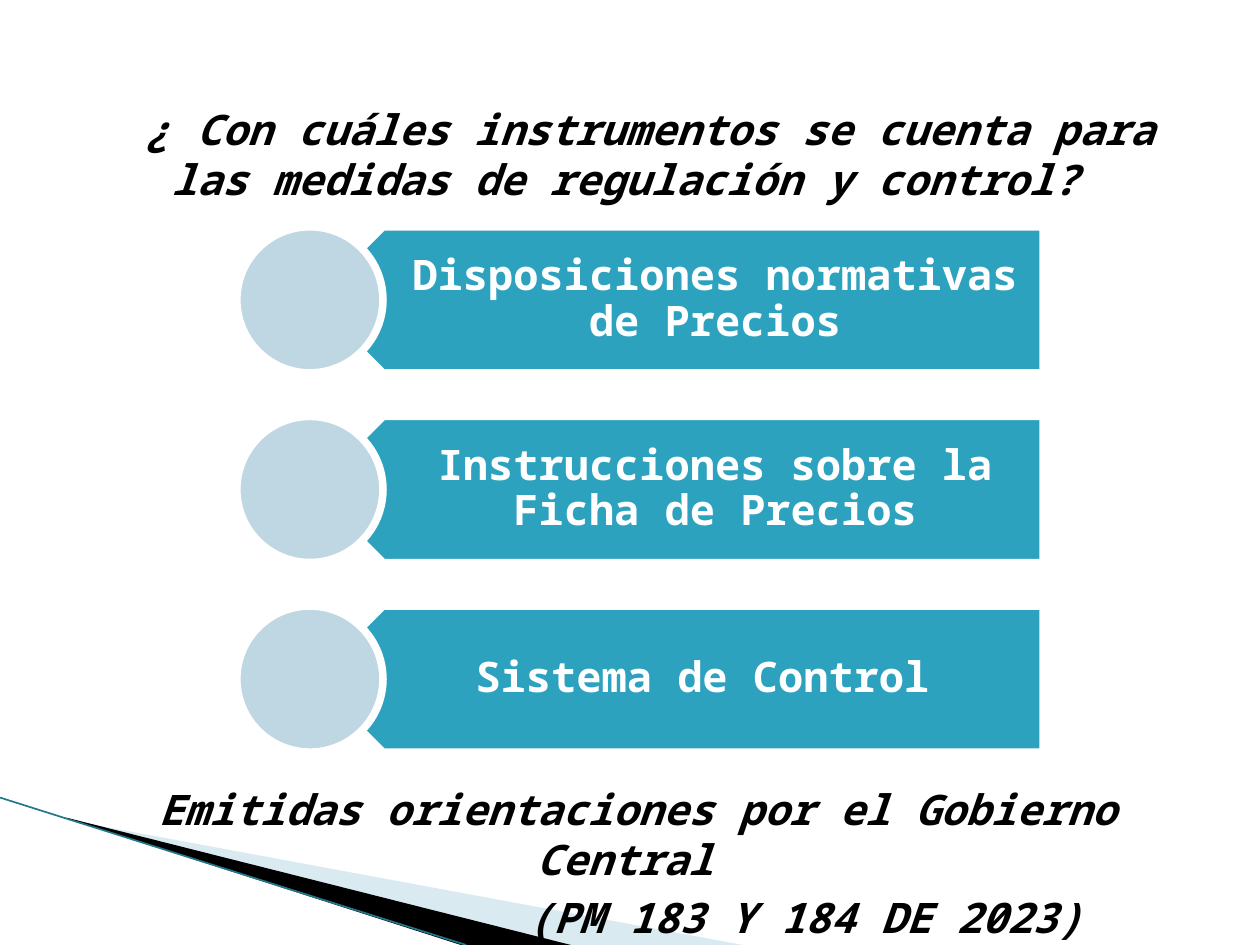
import pptx
import pptx.util
import pptx.dml.color
import pptx.enum.shapes
import pptx.enum.text
import pptx.oxml.ns
import lxml.etree

Inches = pptx.util.Inches
Pt = pptx.util.Pt
SHAPES = pptx.enum.shapes.MSO_SHAPE
ANCHORS = pptx.enum.text.MSO_ANCHOR
CENTER = pptx.enum.text.PP_ALIGN.CENTER

INSTRUMENTS = [
    "Disposiciones normativas de Precios",
    "Instrucciones sobre la Ficha de Precios",
    "Sistema de Control ",
]
ROW_TOP, ROW_STEP, ROW_HEIGHT = 1.8, 1.505, 1.16


def color(value):
    return pptx.dml.color.RGBColor.from_string(value)


def apply(target, values):
    """Set each attribute named in values on the target."""
    for name, value in values.items():
        setattr(target, name, value)


class SlideBuilder:
    """Holds the style and the current slide."""

    font = {"name": "Noto Sans Mono", "size": Pt(24), "bold": True}
    black, white = "000000", "FFFFFF"
    teal, dark_teal = "2DA2BF", "21788D"
    pale_blue, wedge_blue = "BED7E2", "A0CBDC"

    def __init__(self, slide):
        self.slide = slide

    def paint(self, shape, fill, line=None, width=0):
        shape.shadow.inherit = False
        shape.fill.solid()
        shape.fill.fore_color.rgb = color(fill)
        if line:
            shape.line.color.rgb = color(line)
            shape.line.width = Pt(width)
        else:
            shape.line.fill.background()

    def shape(self, kind, left, top, width, height, fill, rotation=0):
        shape = self.slide.shapes.add_shape(
            kind, Inches(left), Inches(top), Inches(width), Inches(height))
        shape.rotation = rotation
        self.paint(shape, fill, self.white, 4.33)

    def wedge(self, points, fill, opacity=100):
        corners = [(Inches(x), Inches(y)) for x, y in points]
        builder = self.slide.shapes.build_freeform(*corners[0])
        builder.add_line_segments(corners[1:], close=True)
        shape = builder.convert_to_shape()
        self.paint(shape, fill)
        if opacity < 100:
            tint = shape.fill._xPr.find(".//" + pptx.oxml.ns.qn("a:srgbClr"))
            alpha = lxml.etree.SubElement(tint, pptx.oxml.ns.qn("a:alpha"))
            alpha.set("val", str(opacity * 1000))

    def line(self, start, end, line, width):
        connector = self.slide.shapes.add_connector(
            pptx.enum.shapes.MSO_CONNECTOR.STRAIGHT,
            *(Inches(value) for value in start + end))
        connector.line.color.rgb = color(line)
        connector.line.width = Pt(width)
        lxml.etree.SubElement(
            connector._element.spPr, pptx.oxml.ns.qn("a:effectLst"))

    def text(self, left, top, width, height, lines, ink, insets,
             anchor=ANCHORS.TOP, spacing=1.0, italic=False):
        """Add centred text; each line is a pair of wording and left indent."""
        box = self.slide.shapes.add_textbox(
            Inches(left), Inches(top), Inches(width), Inches(height))
        sides = ("margin_left", "margin_top", "margin_right", "margin_bottom")
        frame = box.text_frame
        apply(frame, {"word_wrap": True, "vertical_anchor": anchor})
        apply(frame, {side: Inches(inset) for side, inset in zip(sides, insets)})
        for index, (wording, indent) in enumerate(lines):
            para = frame.add_paragraph() if index else frame.paragraphs[0]
            apply(para, {"alignment": CENTER, "line_spacing": spacing,
                         "space_before": Pt(4 if index else 0)})
            para._p.get_or_add_pPr().set("marL", str(Inches(indent)))
            span = para.add_run()
            span.text = wording
            apply(span.font, {**self.font, "italic": italic})
            span.font.color.rgb = color(ink)

    def statement(self, top, height, lines):
        self.text(0.5, top, 9, height, lines, self.black,
                  (0.1, 0.05, 0.1, 0.05), italic=True)

    def instrument(self, top, wording):
        self.shape(SHAPES.PENTAGON, 2.46, top, 5.82, ROW_HEIGHT, self.teal, 180)
        self.text(2.75, top, 5.53, ROW_HEIGHT, [(wording, 0)], self.white,
                  (0.51, 0.1, 0.19, 0.1), ANCHORS.MIDDLE, 0.9)
        self.shape(SHAPES.OVAL, 1.88, top, ROW_HEIGHT, ROW_HEIGHT, self.pale_blue)


def main():
    deck = pptx.Presentation()
    apply(deck, {"slide_width": Inches(10), "slide_height": Inches(7.5)})
    page = SlideBuilder(deck.slides.add_slide(deck.slide_layouts[6]))

    page.wedge([(0.55, 6.51), (5.95, 7.51), (4.56, 7.51), (0.55, 6.5)],
               page.wedge_blue, 40)
    page.wedge([(0.53, 6.49), (4.57, 7.51), (3.72, 7.52), (0.54, 6.5)],
               page.black)
    page.line((0, 6.33), (3.7, 7.5), page.dark_teal, 0.95)

    page.statement(0.77, 0.9, [
        (" ¿ Con cuáles instrumentos se cuenta para las medidas de "
         "regulación y control? ", 0.12)])
    for row, wording in enumerate(INSTRUMENTS):
        page.instrument(ROW_TOP + row * ROW_STEP, wording)
    page.statement(6.17, 1.33, [
        ("Emitidas orientaciones por el Gobierno Central ", 0.12),
        ("(PM 183 Y 184 DE 2023)", 2.78)])

    deck.save("out.pptx")


if __name__ == "__main__":
    main()
